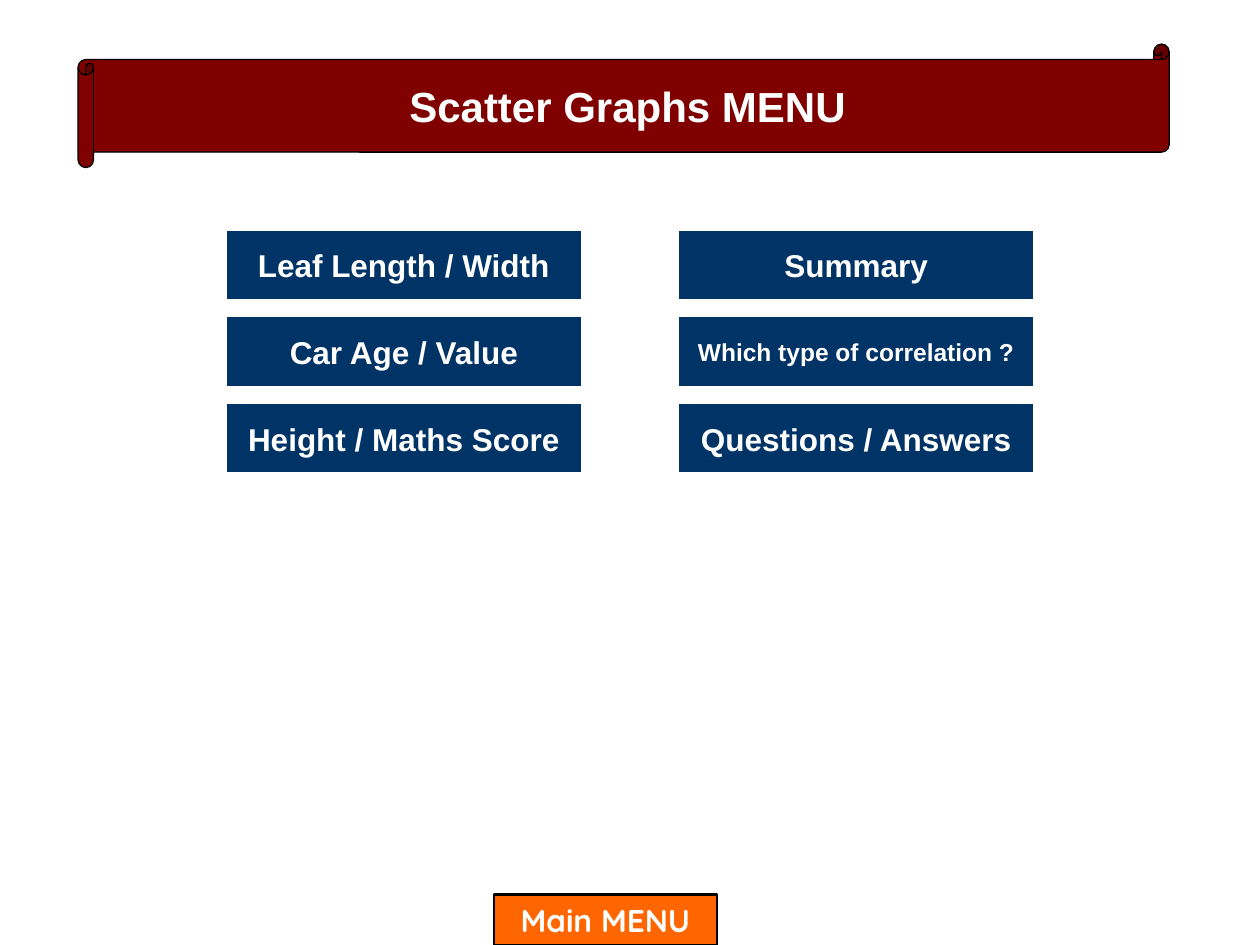
"""Build the Scatter Graphs menu slide."""
import pptx
import pptx.dml.color
import pptx.enum.shapes
import pptx.enum.text
import pptx.util

Pt = pptx.util.Pt
RGBColor = pptx.dml.color.RGBColor
SHAPE = pptx.enum.shapes.MSO_SHAPE

MAROON = RGBColor(0x80, 0x00, 0x00)
NAVY = RGBColor(0x00, 0x33, 0x66)
ORANGE = RGBColor(0xFF, 0x66, 0x00)
WHITE = RGBColor(0xFF, 0xFF, 0xFF)
BLACK = RGBColor(0x00, 0x00, 0x00)

MENU_LEFT, MENU_TOP = 129.6, 131.76
COLUMN_STEP, ROW_STEP = 258.48, 49.68
MENU_COLUMNS = [
    [("Leaf Length / Width", 18), ("Car Age / Value", 18), ("Height / Maths Score", 18)],
    [("Summary", 18), ("Which type of correlation ?", 14), ("Questions / Answers", 18)],
]


class MenuPage:
    def __init__(self, page, font="Arial"):
        self.page = page
        self.font = font

    def panel(self, kind, frame, fill, text, size, line_width=0, font=None):
        box = self.page.shapes.add_shape(kind, *(Pt(length) for length in frame))
        box.shadow.inherit = False
        box.fill.solid()
        box.fill.fore_color.rgb = fill
        if line_width:
            box.line.color.rgb = BLACK
            box.line.width = Pt(line_width)
        else:
            box.line.fill.background()
        box.text_frame.word_wrap = False
        box.text_frame.vertical_anchor = pptx.enum.text.MSO_ANCHOR.MIDDLE
        para = box.text_frame.paragraphs[0]
        para.alignment = pptx.enum.text.PP_ALIGN.CENTER
        span = para.add_run()
        span.text = text
        span.font.name = font or self.font
        span.font.size = Pt(size)
        span.font.bold = True
        span.font.color.rgb = WHITE

    def banner(self, frame, text):
        self.panel(SHAPE.HORIZONTAL_SCROLL, frame, MAROON, text, 24, line_width=0.75)

    def button(self, frame, text, size=18, fill=NAVY, line_width=0, font=None):
        self.panel(SHAPE.ACTION_BUTTON_CUSTOM, frame, fill, text, size, line_width, font)


def main():
    deck = pptx.Presentation()
    deck.slide_width, deck.slide_height = Pt(720), Pt(540)
    menu = MenuPage(deck.slides.add_slide(deck.slide_layouts[6]))

    menu.banner((44.64, 25.2, 623.52, 70.56), "Scatter Graphs MENU")
    for column, entries in enumerate(MENU_COLUMNS):
        for row, (text, size) in enumerate(entries):
            left = MENU_LEFT + column * COLUMN_STEP
            top = MENU_TOP + row * ROW_STEP
            menu.button((left, top, 202.32, 38.88), text, size)
    menu.button((282.24, 511.2, 127.44, 28.8), "Main MENU",
                fill=ORANGE, line_width=1.25, font="Quicksand")

    deck.save("out.pptx")


if __name__ == "__main__":
    main()
